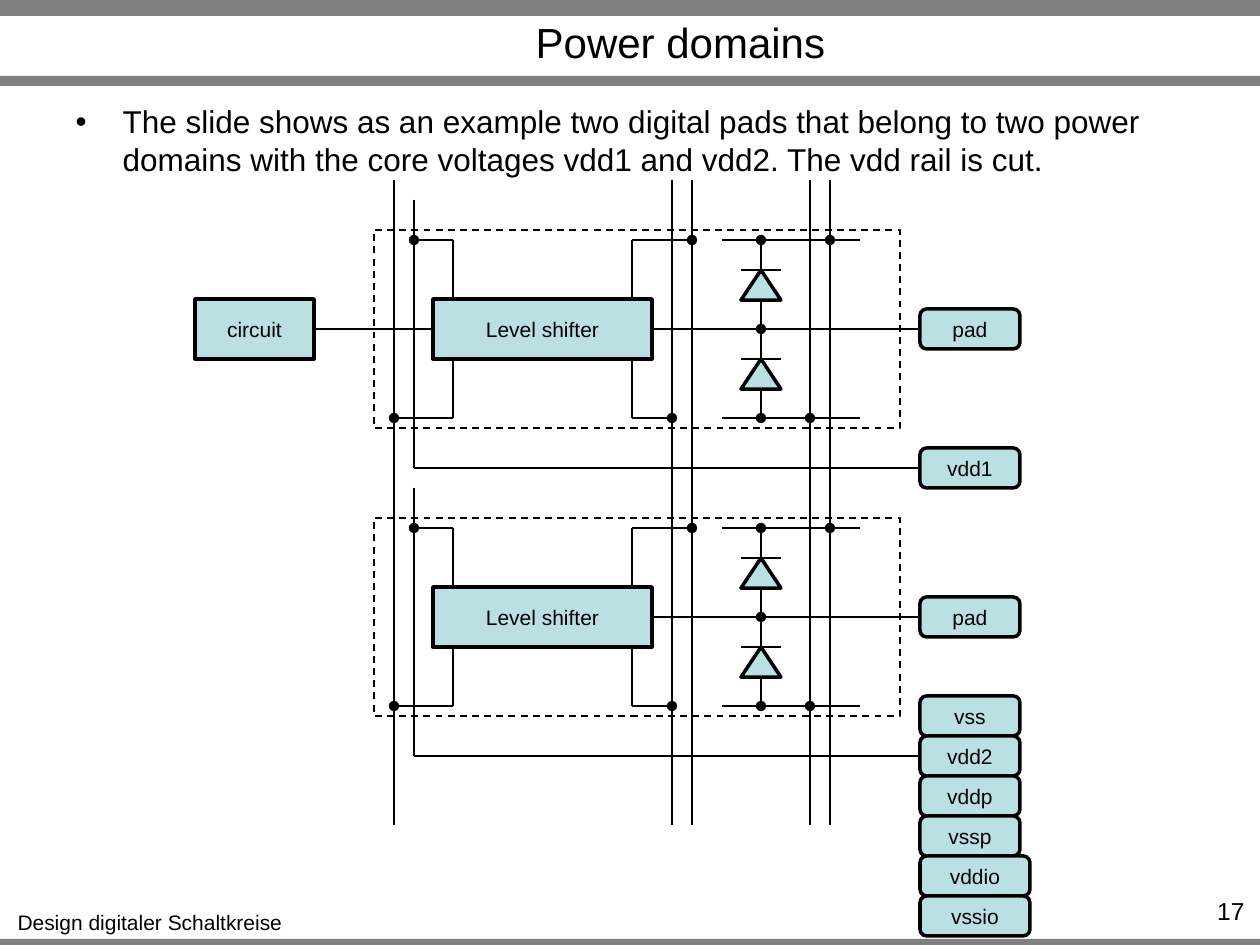
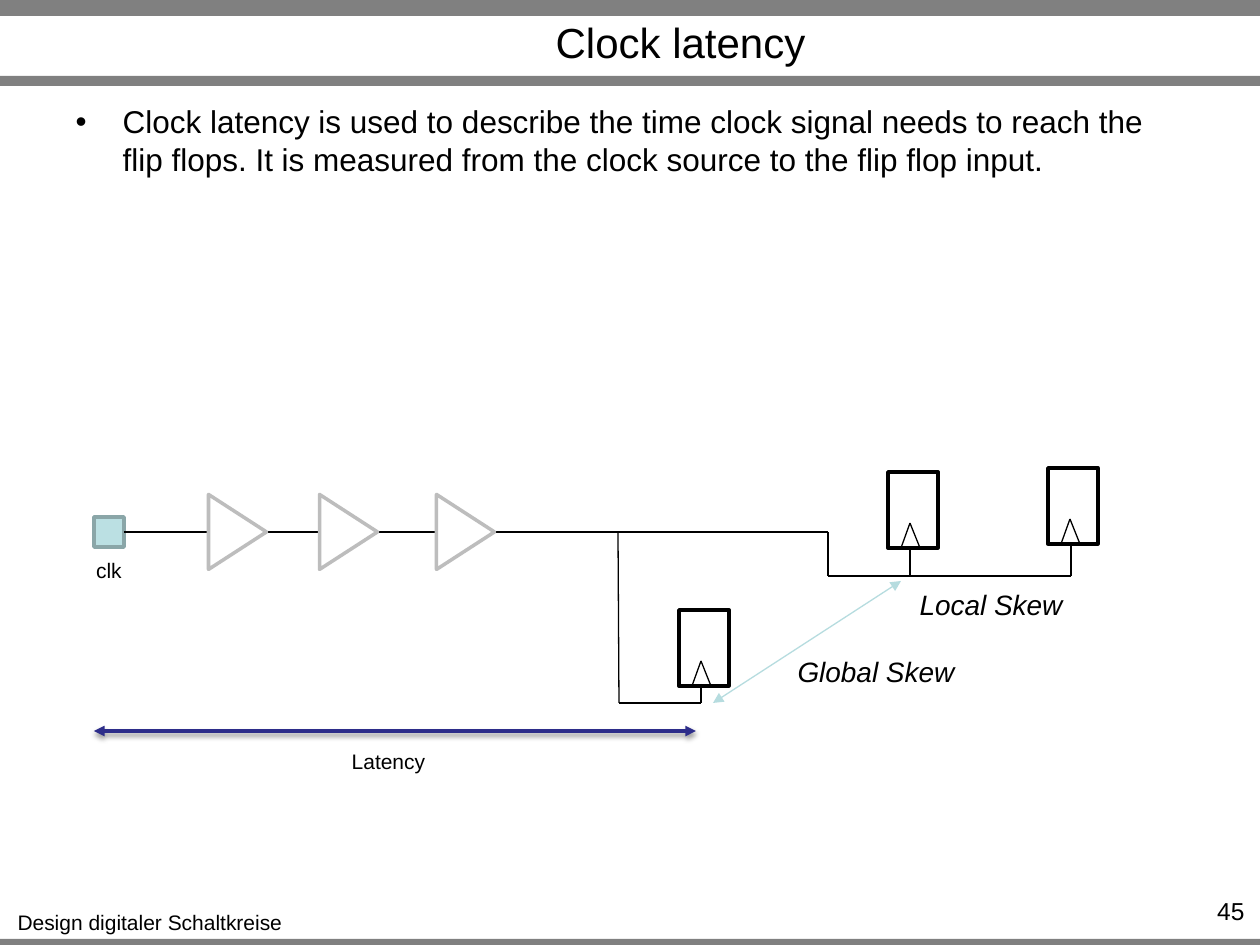
from typing import NamedTuple, Optional

from lxml.etree import SubElement
from pptx import Presentation
from pptx.dml.color import RGBColor
from pptx.enum.dml import MSO_LINE_DASH_STYLE as Dash
from pptx.enum.shapes import MSO_CONNECTOR as Connector, MSO_SHAPE as Preset
from pptx.enum.text import MSO_ANCHOR as Anchor, MSO_AUTO_SIZE as AutoSize, PP_ALIGN as Align
from pptx.oxml.ns import qn
from pptx.util import Emu, Pt

EMU_PER_PX = 914400 / 126
FONT = "Arial"
COLORS = {
    "black": "000000",
    "white": "FFFFFF",
    "band": "808080",
    "teal": "BBE0E3",
    "teal_edge": "8AA6A8",
    "buffer_edge": "BDBDBD",
    "latency": "2D2D8A",
    "skew": "B6DCDF",
}
FOOTER = "Design digitaler Schaltkreise"


class Box(NamedTuple):
    left: int
    top: int
    width: int
    height: int


class Wire(NamedTuple):
    x1: int
    y1: int
    x2: int
    y2: int
    tail: Optional[str] = None


class Label(NamedTuple):
    text: str
    box: Box
    size: int = 12
    italic: bool = False


BANDS = [Box(0, 939, 1260, 10), Box(0, 0, 1260, 16), Box(0, 76, 1260, 10)]
FOOTER_LABEL = Label(FOOTER, Box(4, 903, 292, 38))

# Power domains: x positions of the rails and the pad column
VSS, VDD, VSSP, VDDP, VSSIO, VDDIO = 394, 414, 672, 692, 810, 830
SHIFTER_LEFT, SHIFTER_RIGHT = 433, 652
DIODE, PAD_LEFT = 761, 920
RAIL_TOP, RAIL_BOTTOM = 180, 825
CELL_TOPS = [240, 528]
CELL_HEIGHT, SHIFTER_HEIGHT = 178, 60
STACKED_PADS = ["vss", "vdd2", "vddp", "vssp", "vddio", "vssio"]

# Clock latency
CLOCK_Y, BRANCH_Y, LOCAL_Y = 532, 703, 576
BUFFER_LEFTS = [200, 311, 428]
FLIP_FLOPS = [(888, 472), (679, 610), (1048, 468)]
CLOCK_WIRES = [
    Wire(124, CLOCK_Y, 828, CLOCK_Y),
    Wire(619, BRANCH_Y, 618, CLOCK_Y),
    Wire(828, LOCAL_Y, 828, CLOCK_Y),
    Wire(1071, LOCAL_Y, 828, LOCAL_Y),
    Wire(910, 547, 910, LOCAL_Y),
    Wire(701, BRANCH_Y, 619, BRANCH_Y),
    Wire(701, 684, 701, BRANCH_Y),
    Wire(1071, 544, 1071, LOCAL_Y),
]
CLOCK_LABELS = [
    Label("clk", Box(77, 551, 64, 50)),
    Label("Latency", Box(320, 742, 137, 50)),
    Label("Local Skew", Box(906, 581, 170, 47), 16, True),
    Label("Global Skew", Box(784, 648, 184, 47), 16, True),
]


def px(value: int) -> Emu:
    return Emu(round(value * EMU_PER_PX))


def color(name: str) -> RGBColor:
    return RGBColor.from_string(COLORS[name])


def place(shape, box: Box) -> None:
    shape.left, shape.top, shape.width, shape.height = map(px, box)


def write_text(frame, text: str, *, size: int = 12, align=Align.CENTER,
               italic: bool = False, anchor=Anchor.TOP, wrap: bool = True):
    frame.word_wrap = wrap
    frame.auto_size = AutoSize.NONE
    frame.vertical_anchor = anchor
    paragraph = frame.paragraphs[0]
    paragraph.alignment = align
    paragraph.space_before = Pt(0)
    run = paragraph.add_run()
    run.text = text
    run.font.name = FONT
    run.font.size = Pt(size)
    run.font.italic = italic
    run.font.color.rgb = color("black")
    return paragraph


def add_label(shapes, label: Label, align=Align.CENTER, wrap: bool = False) -> None:
    text_box = shapes.add_textbox(*map(px, label.box))
    write_text(text_box.text_frame, label.text, size=label.size,
               italic=label.italic, align=align, wrap=wrap)


def add_block(shapes, preset, box: Box, *, text: str = "", fill: Optional[str] = "teal",
              line: Optional[str] = "black", width: float = 2):
    shape = shapes.add_shape(preset, *map(px, box))
    shape.shadow.inherit = False
    if fill:
        shape.fill.solid()
        shape.fill.fore_color.rgb = color(fill)
    else:
        shape.fill.background()
    if line:
        shape.line.color.rgb = color(line)
        shape.line.width = Pt(width)
    else:
        shape.line.fill.background()
    if text:
        write_text(shape.text_frame, text, anchor=Anchor.MIDDLE)
    return shape


def add_wire(shapes, wire: Wire, *, line: str = "black", width: float = 0.75,
             head: Optional[str] = None, shadow: bool = False) -> None:
    connector = shapes.add_connector(Connector.STRAIGHT, *map(px, wire[:4]))
    connector.line.color.rgb = color(line)
    connector.line.width = Pt(width)
    properties = connector.line._get_or_add_ln()
    for tag, kind in (("a:headEnd", head), ("a:tailEnd", wire.tail)):
        if kind:
            SubElement(properties, qn(tag), type=kind)
    effects = SubElement(connector._element.spPr, qn("a:effectLst"))
    if shadow:
        outer = SubElement(effects, qn("a:outerShdw"), blurRad=str(Pt(3.1)),
                           dist=str(Pt(1.6)), dir="5400000", rotWithShape="0")
        shade = SubElement(outer, qn("a:srgbClr"), val=COLORS["black"])
        SubElement(shade, qn("a:alpha"), val="38000")


def add_slide(presentation, title: str, body: str, number: int, body_height: int):
    """Add a slide with the shared bands, footer, title and bullet."""
    slide = presentation.slides.add_slide(presentation.slide_layouts[1])
    for band in BANDS:
        add_block(slide.shapes, Preset.RECTANGLE, band, fill="band", line=None)
    add_label(slide.shapes, FOOTER_LABEL)
    add_label(slide.shapes, Label(str(number), Box(1147, 890, 110, 30), 14),
              align=Align.RIGHT, wrap=True)
    place(slide.shapes.title, Box(164, 18, 1033, 48))
    write_text(slide.shapes.title.text_frame, title, size=24, anchor=Anchor.MIDDLE)
    content = slide.placeholders[1]
    place(content, Box(63, 96, 1134, body_height))
    bullet = write_text(content.text_frame, body, size=18, align=Align.LEFT)
    indent = px(47)
    bullet_properties = bullet._p.get_or_add_pPr()
    bullet_properties.set("marL", str(indent))
    bullet_properties.set("indent", str(-indent))
    return slide


def add_pad(shapes, text: str, top: int, width: int = 100) -> None:
    add_block(shapes, Preset.ROUNDED_RECTANGLE, Box(PAD_LEFT, top, width, 40), text=text)


def add_pad_cell(shapes, top: int) -> None:
    """Draw one power domain: level shifter, two clamp diodes, pad and vdd rail."""
    middle, bottom = top + CELL_HEIGHT // 2, top + CELL_HEIGHT
    shifter_top = middle - SHIFTER_HEIGHT // 2
    shifter_bottom = shifter_top + SHIFTER_HEIGHT
    supply_y = bottom + 50
    left_stub, right_stub = SHIFTER_LEFT + 20, SHIFTER_RIGHT - 20
    wires = [
        Wire(VDD, top - 40, VDD, supply_y),
        Wire(VDD, supply_y, PAD_LEFT, supply_y),
        Wire(VDD, top, left_stub, top),
        Wire(left_stub, top, left_stub, shifter_top),
        Wire(VSS, bottom, left_stub, bottom),
        Wire(left_stub, shifter_bottom, left_stub, bottom),
        Wire(right_stub, top, VDDP, top),
        Wire(right_stub, top, right_stub, shifter_top),
        Wire(right_stub, bottom, VSSP, bottom),
        Wire(right_stub, shifter_bottom, right_stub, bottom),
        Wire(SHIFTER_RIGHT, middle, PAD_LEFT, middle),
        Wire(722, top, 860, top),
        Wire(722, bottom, 860, bottom),
        Wire(DIODE, top, DIODE, bottom),
    ]
    wires += [Wire(x, top - 40, x, top, "oval") for x in (VDD, VDDP, VDDIO)]
    wires += [Wire(x, bottom - 40, x, bottom, "oval") for x in (VSS, VSSP, VSSIO)]
    wires += [Wire(722, y, DIODE, y, "oval") for y in (top, middle, bottom)]
    for wire in wires:
        add_wire(shapes, wire)
    for diode_top in (top + 30, middle + 30):
        add_wire(shapes, Wire(DIODE - 20, diode_top, DIODE + 20, diode_top))
        add_block(shapes, Preset.ISOSCELES_TRIANGLE, Box(DIODE - 20, diode_top, 40, 30))
    add_block(shapes, Preset.RECTANGLE, text="Level shifter",
              box=Box(SHIFTER_LEFT, shifter_top, SHIFTER_RIGHT - SHIFTER_LEFT, SHIFTER_HEIGHT))
    add_pad(shapes, "pad", middle - 20)
    frame = add_block(shapes, Preset.RECTANGLE, Box(374, top - 10, 526, 198),
                      fill=None, width=1)
    frame.line.dash_style = Dash.DASH


def add_flip_flop(shapes, left: int, top: int) -> None:
    group = shapes.add_group_shape().shapes
    add_block(group, Preset.RECTANGLE, Box(left, top, 50, 76), fill="white")
    for foot in (13, 32):
        add_wire(group, Wire(left + foot, top + 76, left + 22, top + 51))


def build_power_domains(presentation) -> None:
    slide = add_slide(
        presentation, "Power domains",
        "The slide shows as an example two digital pads that belong to two power "
        "domains with the core voltages vdd1 and vdd2. The vdd rail is cut.", 17, 62)
    shapes = slide.shapes
    for x in (VSS, VSSP, VDDP, VSSIO, VDDIO):
        add_wire(shapes, Wire(x, RAIL_TOP, x, RAIL_BOTTOM))
    add_wire(shapes, Wire(315, 329, SHIFTER_LEFT, 329))
    add_block(shapes, Preset.RECTANGLE, Box(195, 299, 119, 60), text="circuit")
    for top in CELL_TOPS:
        add_pad_cell(shapes, top)
    add_pad(shapes, "vdd1", 448)
    for row, name in enumerate(STACKED_PADS):
        add_pad(shapes, name, 696 + 40 * row, 110 if name.endswith("io") else 100)


def build_clock_latency(presentation) -> None:
    slide = add_slide(
        presentation, "Clock latency",
        "Clock latency is used to describe the time clock signal needs to reach the "
        "flip flops. It is measured from the clock source to the flip flop input.", 45, 824)
    shapes = slide.shapes
    add_block(shapes, Preset.RECTANGLE, Box(94, 517, 30, 30), line="teal_edge")
    for left, top in FLIP_FLOPS:
        add_flip_flop(shapes, left, top)
    for wire in CLOCK_WIRES:
        add_wire(shapes, wire)
    for left in BUFFER_LEFTS:
        buffer = add_block(shapes, Preset.ISOSCELES_TRIANGLE, Box(left, 503, 75, 58),
                           fill="white", line="buffer_edge")
        buffer.rotation = 90
    add_wire(shapes, Wire(94, 731, 696, 731, "triangle"), line="latency", width=2,
             head="triangle", shadow=True)
    for label in CLOCK_LABELS:
        add_label(shapes, label)
    add_wire(shapes, Wire(713, BRANCH_Y, 901, 581, "triangle"), line="skew",
             head="triangle")


def main() -> None:
    presentation = Presentation()
    presentation.slide_width, presentation.slide_height = px(1260), px(945)
    build_power_domains(presentation)
    build_clock_latency(presentation)
    presentation.save("out.pptx")


if __name__ == "__main__":
    main()
